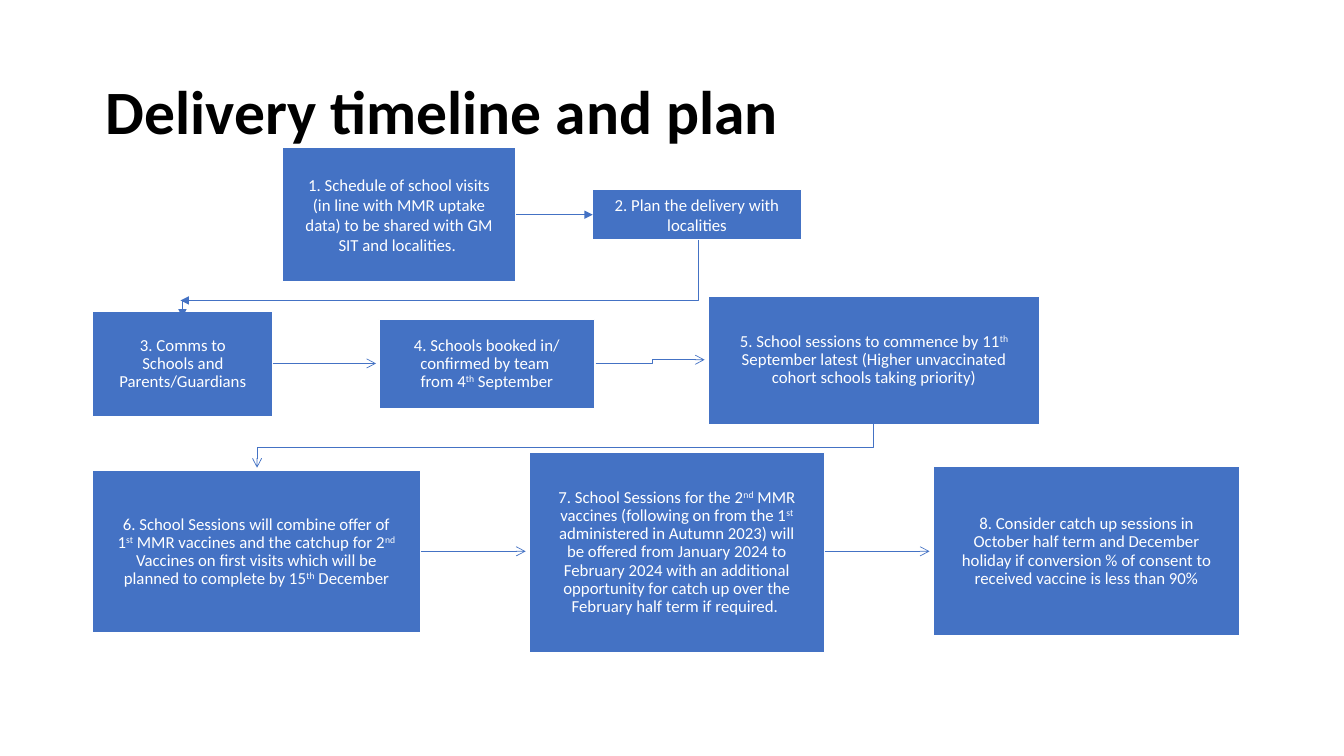
"""Build the vaccination delivery timeline slide."""
from lxml import etree
from pptx import Presentation
from pptx.dml.color import RGBColor
from pptx.enum.shapes import MSO_CONNECTOR, MSO_SHAPE
from pptx.enum.text import MSO_ANCHOR, PP_ALIGN
from pptx.oxml.ns import qn
from pptx.util import Pt

RECT = MSO_SHAPE.RECTANGLE
STRAIGHT = MSO_CONNECTOR.STRAIGHT
TOP, MIDDLE = MSO_ANCHOR.TOP, MSO_ANCHOR.MIDDLE
LEFT, CENTER = PP_ALIGN.LEFT, PP_ALIGN.CENTER
BLUE = RGBColor(0x44, 0x72, 0xC4)
WHITE = RGBColor(0xFF, 0xFF, 0xFF)
BLACK = RGBColor(0, 0, 0)

TITLE = "Delivery timeline and plan"
TITLE_BOX = (68.4, 54.7, 661, 55.4)
TITLE_FONT = {"name": "Calibri", "size": Pt(44), "bold": True}
STEP_FONT = {"name": "Calibri", "size": Pt(12), "bold": False}

# Text between carets is superscript.
STEPS = [
    ("1. Schedule of school visits (in line with MMR uptake data) to be shared "
     "with GM SIT and localities. ", (201.6, 105.1, 167, 96.5), 1.0, (15.8, 17.3)),
    ("2. Plan the delivery with localities",
     (423.4, 135.4, 149, 36), 1.0, (7.2, 3.6)),
    ("3. Comms to Schools and Parents/Guardians",
     (66.2, 222.5, 128.9, 74.9), 0.9, (16.6, 17.3)),
    ("4. Schools booked in/ confirmed by team  from 4^th^ September",
     (270.7, 228.2, 154.1, 63.4), 0.9, (16.6, 17.3)),
    ("5. School sessions to commence by 11^th^ September latest (Higher "
     "unvaccinated cohort schools taking priority)",
     (506.2, 211.7, 236.2, 91.4), 0.9, (16.6, 17.3)),
    ("6. School Sessions will combine offer of 1^st^ MMR vaccines and the catchup "
     "for 2^nd^ Vaccines on first visits which will be planned to complete by "
     "15^th^ December", (66.2, 336.2, 234, 115.9), 0.9, (16.6, 17.3)),
    ("7. School Sessions for the 2^nd^ MMR vaccines (following on from the 1^st^ "
     "administered in Autumn 2023) will be offered from January 2024 to February "
     "2024 with an additional opportunity for catch up over the February half "
     "term if required. ", (378, 323.3, 211, 142.6), 0.9, (16.6, 17.3)),
    ("8. Consider catch up sessions in October half term and December holiday if "
     "conversion % of consent to received vaccine is less than 90%",
     (666.7, 333.4, 218.9, 121), 0.9, (16.6, 17.3)),
]
ROUTES = [
    ("triangle", [(368.6, 153.4), (423.4, 153.4)]),
    ("triangle", [(498.8, 171.4), (498.8, 214.6), (128.9, 214.6)]),
    ("triangle", [(130.3, 214.6), (130.3, 226.8)]),
    ("arrow", [(194.8, 259.6), (268.6, 259.6)]),
    ("arrow", [(425.5, 259.9), (465.8, 259.9), (465.8, 257), (503.3, 257)]),
    ("arrow", [(624.2, 303.1), (624.2, 319.7), (183.6, 319.7), (183.6, 334.1)]),
    ("arrow", [(300.6, 393.8), (375.5, 393.8)]),
    ("arrow", [(589, 393.8), (664, 393.8)]),
]


def put_text(tf, text, font, color, align, spacing, anchor, insets):
    """Fill a text frame, raising the parts between carets."""
    dx, dy = (Pt(v) for v in insets)
    frame = {"word_wrap": True, "vertical_anchor": anchor, "margin_left": dx,
             "margin_right": dx, "margin_top": dy, "margin_bottom": dy}
    for name, value in frame.items():
        setattr(tf, name, value)
    p = tf.paragraphs[0]
    p.alignment, p.line_spacing = align, spacing
    for i, part in enumerate(text.split("^")):
        r = p.add_run()
        r.text = part
        for name, value in font.items():
            setattr(r.font, name, value)
        r.font.color.rgb = color
        if i % 2:
            r.font._element.set("baseline", "30000")


def add_step(shapes, text, box, spacing, insets):
    """Add one blue step box."""
    sp = shapes.add_shape(RECT, *(Pt(v) for v in box))
    sp.shadow.inherit = False
    sp.fill.solid()
    sp.fill.fore_color.rgb = BLUE
    sp.line.color.rgb = WHITE
    sp.line.width = Pt(1)
    put_text(sp.text_frame, text, STEP_FONT, WHITE, CENTER, spacing, MIDDLE, insets)


def add_route(shapes, head, points):
    """Add an arrow through the given points."""
    pts = [(Pt(x), Pt(y)) for x, y in points]
    if len(pts) == 2:
        sp = shapes.add_connector(STRAIGHT, *pts[0], *pts[1])
    else:
        fb = shapes.build_freeform(*pts[0])
        fb.add_line_segments(pts[1:], close=False)
        sp = fb.convert_to_shape()
        sp.fill.background()
    sp.line.color.rgb = BLUE
    sp.line.width = Pt(0.5)
    etree.SubElement(sp.line._get_or_add_ln(), qn("a:tailEnd"), type=head)
    etree.SubElement(sp._element.spPr, qn("a:effectLst"))


def main():
    """Assemble and save the slide."""
    prs = Presentation()
    prs.slide_width, prs.slide_height = Pt(960), Pt(540)
    slide = prs.slides.add_slide(prs.slide_layouts[5])
    title = slide.shapes.title
    for name, value in zip(("left", "top", "width", "height"), TITLE_BOX):
        setattr(title, name, Pt(value))
    put_text(title.text_frame, TITLE, TITLE_FONT, BLACK, LEFT, 0.9, TOP, (7.2, 3.6))
    for step in STEPS:
        add_step(slide.shapes, *step)
    for route in ROUTES:
        add_route(slide.shapes, *route)
    prs.save("out.pptx")


if __name__ == "__main__":
    main()
